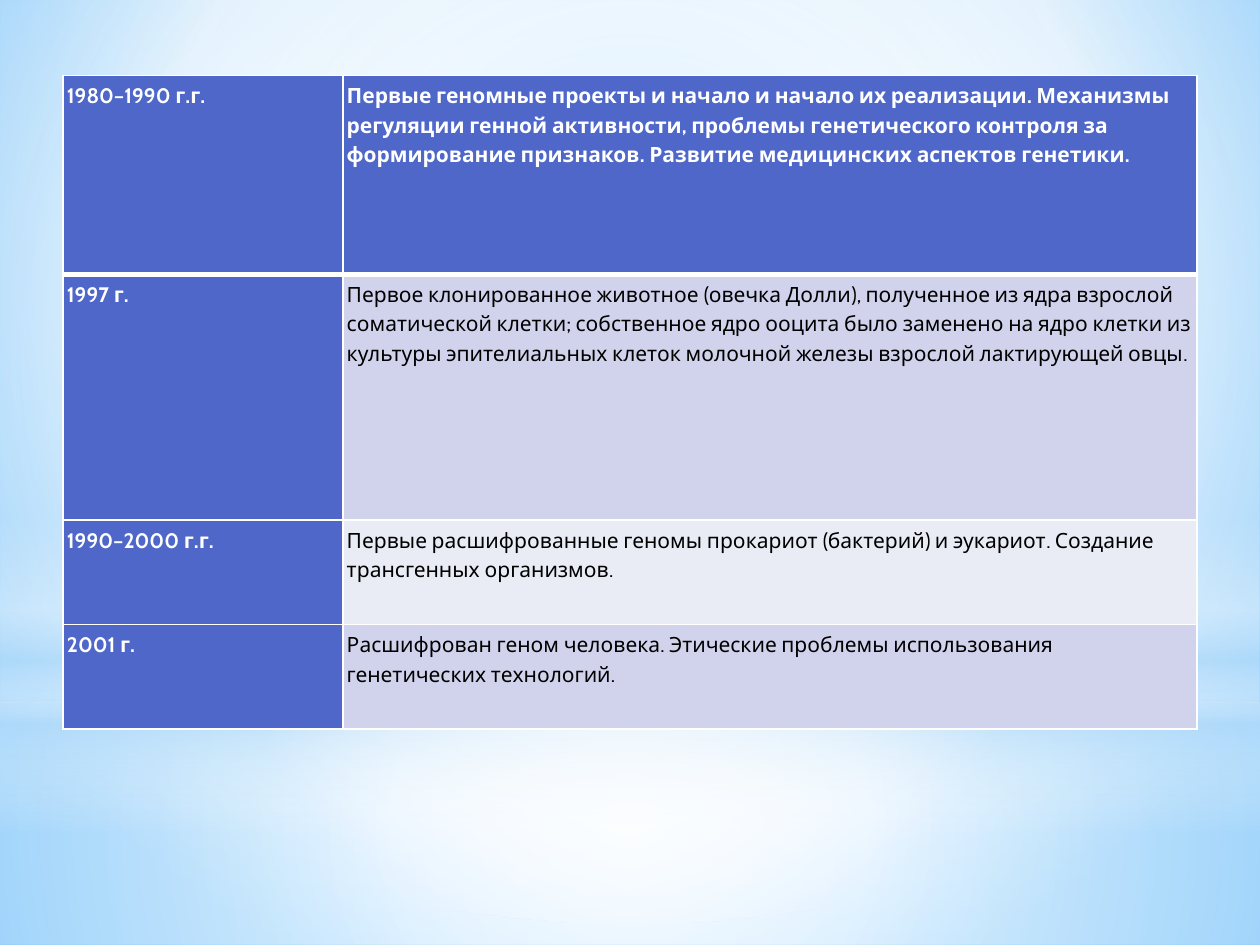
"""Build a slide with a table of milestones in genetics on a soft blue backdrop."""
from dataclasses import dataclass

from lxml import etree
from pptx import Presentation
from pptx.dml.color import RGBColor
from pptx.enum.shapes import MSO_SHAPE
from pptx.oxml import parse_xml
from pptx.oxml.ns import nsdecls, qn
from pptx.util import Cm, Pt

RECTANGLE = MSO_SHAPE.RECTANGLE
OVAL = MSO_SHAPE.OVAL


@dataclass(frozen=True)
class Theme:
    font: str = "Cabin"
    text_size: int = 12
    line_spacing: float = 1.15
    white: str = "FFFFFF"
    black: str = "000000"
    accent: str = "4E67C8"
    bands: tuple = ("D0D3EB", "E9EBF5")
    sky: str = "9ED5FF"
    deep_sky: str = "5BB9FF"
    haze: str = "B4DCFA"
    thin_border: int = 1
    thick_border: int = 3


theme = Theme()


def paint_gradient(fill, owner, stops, focus=None):
    fill.gradient()
    gradient = owner.find(".//" + qn("a:gradFill"))
    stop_xml = "".join(
        f'<a:gs pos="{position * 1000}"><a:srgbClr val="{color}">'
        f'<a:alpha val="{opacity * 1000}"/></a:srgbClr></a:gs>'
        for position, color, opacity in stops
    )
    if focus:
        left, top, right, bottom = (edge * 1000 for edge in focus)
        direction = (
            f'<a:path path="circle"><a:fillToRect l="{left}" t="{top}" '
            f'r="{right}" b="{bottom}"/></a:path>'
        )
    else:
        direction = '<a:lin ang="5400000" scaled="0"/>'
    gradient.getparent().replace(gradient, parse_xml(
        f'<a:gradFill {nsdecls("a")} rotWithShape="1"><a:gsLst>{stop_xml}</a:gsLst>'
        f'{direction}</a:gradFill>'
    ))


def set_borders(cell, top, bottom):
    properties = cell._tc.get_or_add_tcPr()
    widths = {"L": theme.thin_border, "R": theme.thin_border, "T": top, "B": bottom}
    for index, (side, width) in enumerate(widths.items()):
        border = etree.Element(qn(f"a:ln{side}"), w=str(Pt(width)))
        solid = etree.SubElement(border, qn("a:solidFill"))
        etree.SubElement(solid, qn("a:srgbClr"), val=theme.white)
        properties.insert(index, border)


presentation = Presentation()
presentation.slide_width = Cm(25.4)
presentation.slide_height = Cm(19.05)
slide = presentation.slides.add_slide(presentation.slide_layouts[6])

paint_gradient(
    slide.background.fill,
    slide._element,
    [(0, theme.sky, 100), (60, theme.white, 100), (100, theme.deep_sky, 100)],
    (20, 10, 20, 60),
)

center = (50, 50, 50, 50)
glows = [
    (RECTANGLE, 14.17, 4.88, center,
     [(0, theme.white, 91), (37, theme.white, 76), (100, theme.haze, 79)]),
    (RECTANGLE, 0, 14.17, center,
     [(0, theme.white, 89), (48, theme.white, 62), (100, theme.haze, 79)]),
    (RECTANGLE, 10.46, 6.35, None,
     [(0, theme.white, 0), (29, theme.white, 30), (45, theme.haze, 40),
      (55, theme.white, 26), (65, theme.haze, 60), (100, theme.white, 0)]),
    (OVAL, 4.45, 14.17, center, [(0, theme.white, 100), (56, theme.white, 0)]),
]
for outline, top, height, focus, stops in glows:
    glow = slide.shapes.add_shape(
        outline, 0, Cm(top), presentation.slide_width, Cm(height)
    )
    glow.shadow.inherit = False
    glow.line.fill.background()
    paint_gradient(glow.fill, glow._element, stops, focus)

milestones = [
    (4.01, "1980–1990 г.г.",
     "Первые геномные проекты и начало и начало их реализации. Механизмы регуляции "
     "генной активности, проблемы генетического контроля за формирование признаков. "
     "Развитие медицинских аспектов генетики."),
    (4.95, "1997 г.",
     "Первое клонированное животное (овечка Долли), полученное из ядра взрослой "
     "соматической клетки; собственное ядро ооцита было заменено на ядро клетки из "
     "культуры эпителиальных клеток молочной железы взрослой лактирующей овцы."),
    (2.11, "1990–2000 г.г.",
     "Первые расшифрованные геномы прокариот (бактерий) и эукариот. Создание "
     "трансгенных организмов."),
    (2.11, "2001 г.",
     "Расшифрован геном человека. Этические проблемы использования генетических "
     "технологий."),
]
column_widths = (5.64, 17.22)
table_height = sum(height for height, *_ in milestones)
timeline = slide.shapes.add_table(
    len(milestones), len(column_widths),
    Cm(1.27), Cm(1.52), Cm(sum(column_widths)), Cm(table_height),
).table
timeline.first_col = True
for column, width in zip(timeline.columns, column_widths):
    column.width = Cm(width)

for row, (height, *texts) in enumerate(milestones):
    timeline.rows[row].height = Cm(height)
    for column, text in enumerate(texts):
        heading = row == 0 or column == 0
        cell = timeline.cell(row, column)
        cell.margin_left = cell.margin_right = Cm(0.08)
        cell.margin_top = cell.margin_bottom = Cm(0.08)
        cell.fill.solid()
        cell.fill.fore_color.rgb = RGBColor.from_string(
            theme.accent if heading else theme.bands[(row - 1) % 2]
        )
        set_borders(
            cell,
            theme.thick_border if row == 1 else theme.thin_border,
            theme.thick_border if row == 0 else theme.thin_border,
        )
        cell.text = text
        paragraph = cell.text_frame.paragraphs[0]
        paragraph.line_spacing = theme.line_spacing
        paragraph.font.name = theme.font
        paragraph.font.size = Pt(theme.text_size)
        paragraph.font.bold = heading
        paragraph.font.color.rgb = RGBColor.from_string(
            theme.white if heading else theme.black
        )

presentation.save("out.pptx")
